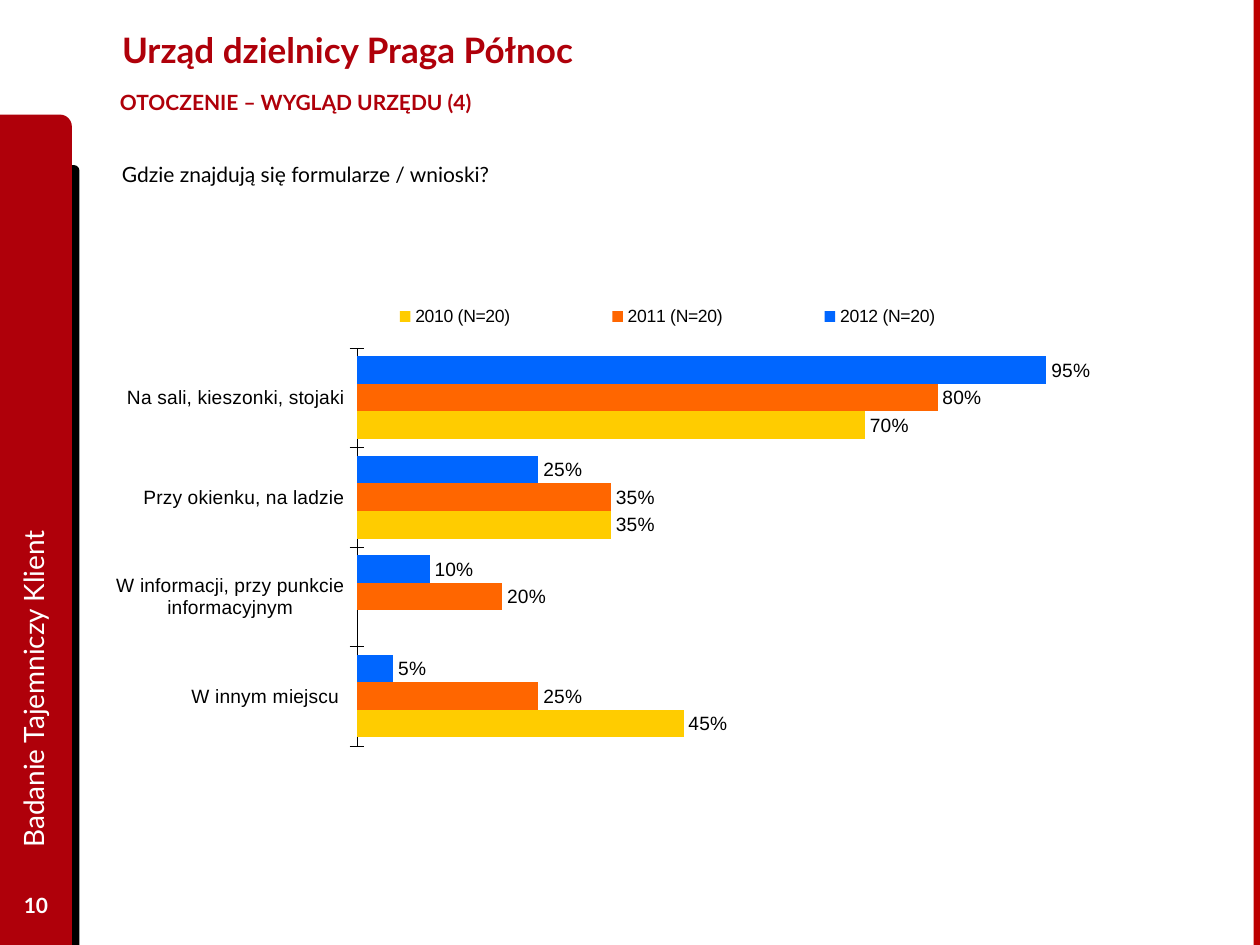
from dataclasses import dataclass

from lxml import etree
from pptx import Presentation
from pptx.chart.data import CategoryChartData
from pptx.dml.color import RGBColor
from pptx.enum.chart import (XL_CHART_TYPE, XL_LABEL_POSITION, XL_LEGEND_POSITION,
                             XL_TICK_MARK)
from pptx.enum.shapes import MSO_SHAPE
from pptx.enum.text import MSO_ANCHOR, PP_ALIGN
from pptx.oxml.ns import qn
from pptx.util import Cm, Pt

BAR = XL_CHART_TYPE.BAR_CLUSTERED
OUTSIDE_END = XL_LABEL_POSITION.OUTSIDE_END
LEGEND_TOP = XL_LEGEND_POSITION.TOP
TICK_CROSS = XL_TICK_MARK.CROSS
RECTANGLE = MSO_SHAPE.RECTANGLE
ROUND_CORNER = MSO_SHAPE.ROUND_1_RECTANGLE
MIDDLE, TOP = MSO_ANCHOR.MIDDLE, MSO_ANCHOR.TOP
LEFT, CENTER = PP_ALIGN.LEFT, PP_ALIGN.CENTER


@dataclass(frozen=True)
class Theme:
    red: str = "AF000A"
    edge_red: str = "BD0000"
    black: str = "000000"
    white: str = "FFFFFF"
    text_font: str = "Lato"
    chart_font: str = "Arial"
    title: float = 20
    band: float = 16
    body: float = 12
    chart: float = 11
    legend: float = 10.1


@dataclass(frozen=True)
class Box:
    """A rectangle in centimetres."""
    left: float
    top: float
    width: float
    height: float

    def inner(self, left, top, width, height):
        return Box(self.left + left, self.top + top, width, height)

    def lengths(self):
        return [Cm(v) for v in (self.left, self.top, self.width, self.height)]


THEME = Theme()
CATEGORIES = ["Na sali, kieszonki, stojaki", "Przy okienku, na ladzie",
              "W informacji, przy punkcie informacyjnym", "W innym miejscu "]
SERIES = [
    ("2012 (N=20)", "0066FF", [0.95, 0.25, 0.10, 0.05]),
    ("2011 (N=20)", "FF6600", [0.80, 0.35, 0.20, 0.25]),
    ("2010 (N=20)", "FFCC00", [0.70, 0.35, None, 0.45]),
]


def color(value):
    return RGBColor.from_string(value)


def style_font(font, name, size, tint, bold=False):
    font.name, font.size, font.bold = name, Pt(size), bold
    font.color.rgb = color(tint)


def add_block(page, kind, box, fill):
    shape = page.shapes.add_shape(kind, *box.lengths())
    shape.shadow.inherit = False
    shape.fill.solid()
    shape.fill.fore_color.rgb = color(fill)
    shape.line.fill.background()


def write(shape, text, size, tint, bold=False, align=LEFT, anchor=MIDDLE,
          side=0.25, wrap=True):
    frame = shape.text_frame
    frame.word_wrap, frame.vertical_anchor = wrap, anchor
    frame.margin_left = frame.margin_right = Cm(side)
    frame.margin_top = frame.margin_bottom = Cm(0.13)
    para = frame.paragraphs[0]
    para.alignment = align
    span = para.add_run()
    span.text = text
    style_font(span.font, THEME.text_font, size, tint, bold)


def add_text(page, box, text, size, tint, **options):
    shape = page.shapes.add_textbox(*box.lengths())
    write(shape, text, size, tint, **options)
    return shape


def add_side_band(page, box):
    # Black backing, red band, study name and page number
    add_block(page, ROUND_CORNER, box.inner(0.99, 1.02, 0.61, 15.72), THEME.black)
    add_block(page, ROUND_CORNER, box.inner(0, 0, 1.45, box.height), THEME.red)
    study = add_text(page, box.inner(-6.65, 7.06, 14.63, 1.3),
                     "Badanie Tajemniczy Klient", THEME.band, THEME.white)
    study.rotation = 270
    add_text(page, box.inner(0, 15.42, 1.45, 1.02), "10", THEME.body, THEME.white,
             bold=True, align=CENTER)


def add_heading(page, box):
    # Title, section line and survey question
    title = page.shapes.title
    title.left, title.top, title.width, title.height = box.inner(
        0.3, 0, 19.74, 1.83).lengths()
    write(title, "Urząd dzielnicy Praga Północ", THEME.title, THEME.red, bold=True)
    add_text(page, box.inner(0, 1.6, 9.78, 0.84), "OTOCZENIE – WYGLĄD URZĘDU (4)",
             THEME.body, THEME.red, bold=True, anchor=TOP, side=0.51, wrap=False)
    add_text(page, box.inner(0.3, 3.04, 10.01, 0.76),
             "Gdzie znajdują się formularze / wnioski?",
             THEME.body, THEME.black, anchor=TOP)


def set_layout(parent, index, x, y, w, h, inner=False):
    """Place a chart part by fractions of the chart area."""
    for old in parent.findall(qn("c:layout")):
        parent.remove(old)
    layout = etree.Element(qn("c:layout"))
    manual = etree.SubElement(layout, qn("c:manualLayout"))
    settings = [("layoutTarget", "inner")] if inner else []
    settings += [("xMode", "edge"), ("yMode", "edge"),
                 ("x", x), ("y", y), ("w", w), ("h", h)]
    for tag, value in settings:
        etree.SubElement(manual, qn(f"c:{tag}")).set("val", str(value))
    parent.insert(index, layout)


def add_answers_chart(page, box):
    data = CategoryChartData(number_format="0%")
    data.categories = CATEGORIES
    for name, _, values in SERIES:
        data.add_series(name, values)
    chart = page.shapes.add_chart(BAR, *box.lengths(), data).chart
    chart.has_title = False
    style_font(chart.font, THEME.chart_font, THEME.chart, THEME.black)

    # Bars and value labels
    plot = chart.plots[0]
    plot.gap_width, plot.overlap, plot.vary_by_categories = 60, 0, False
    for series, (_, tint, _) in zip(plot.series, SERIES):
        series.format.fill.solid()
        series.format.fill.fore_color.rgb = color(tint)
        labels = series.data_labels
        labels.show_value, labels.position = True, OUTSIDE_END
        labels.number_format, labels.number_format_is_linked = "0%", False
        style_font(labels.font, THEME.chart_font, THEME.chart, THEME.black)

    # Axes
    answers, shares = chart.category_axis, chart.value_axis
    answers.reverse_order = True
    answers.major_tick_mark = TICK_CROSS
    answers.format.line.color.rgb = color(THEME.black)
    answers.format.line.width = Pt(0.23)
    style_font(answers.tick_labels.font, THEME.chart_font, THEME.chart, THEME.black)
    shares.minimum_scale, shares.maximum_scale = 0, 1
    shares.has_major_gridlines = False
    shares.visible = False

    # Legend and plot position
    chart.has_legend = True
    legend = chart.legend
    legend.position, legend.include_in_layout = LEGEND_TOP, False
    style_font(legend.font, THEME.chart_font, THEME.legend, THEME.black)
    area = plot._element.getparent()
    set_layout(area, 0, 0.207, 0.113, 0.638, 0.89, inner=True)
    set_layout(area.getparent().find(qn("c:legend")), 1, 0.16, 0, 0.64, 0.08)


def main():
    deck = Presentation()
    deck.slide_width, deck.slide_height = Cm(25.4), Cm(19.05)
    page = deck.slides.add_slide(deck.slide_layouts[5])
    add_side_band(page, Box(0, 2.31, 1.6, 16.74))
    add_block(page, RECTANGLE, Box(25.27, 0, 0.13, 19.05), THEME.edge_red)
    add_heading(page, Box(1.91, 0.08, 20.04, 3.8))
    add_answers_chart(page, Box(2.34, 6.02, 23.04, 9.02))
    deck.save("out.pptx")


if __name__ == "__main__":
    main()
